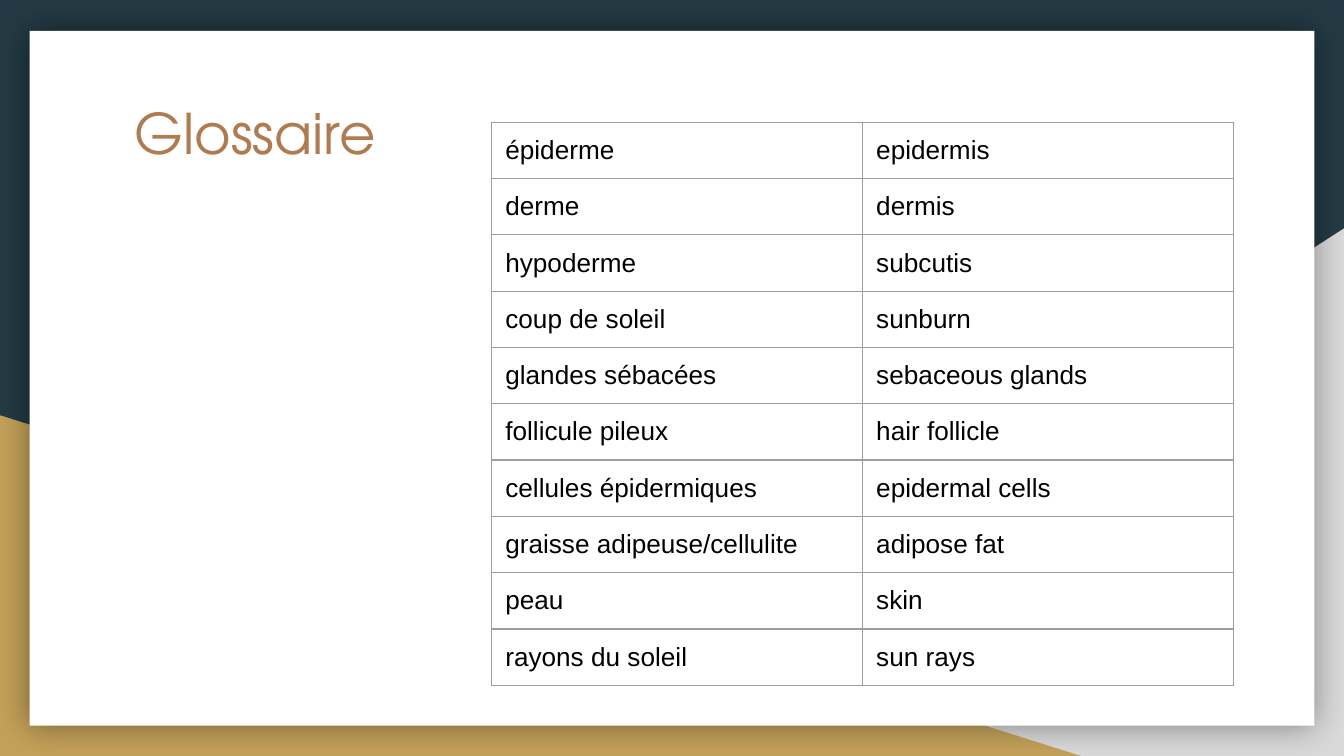
from dataclasses import dataclass

from lxml import etree
from pptx import Presentation
from pptx.dml.color import RGBColor
from pptx.enum.shapes import MSO_SHAPE
from pptx.enum.text import MSO_ANCHOR, PP_ALIGN
from pptx.oxml import parse_xml
from pptx.oxml.ns import nsdecls, qn
from pptx.util import Inches, Pt

RECT = MSO_SHAPE.RECTANGLE
WEDGE = MSO_SHAPE.RIGHT_TRIANGLE
TOP = MSO_ANCHOR.TOP
LEFT = PP_ALIGN.LEFT

NAVY, GREY, GOLD, WHITE = "233A44", "D9D9D9", "C4A15A", "FFFFFF"
BROWN, BLACK, RULE = "AF7B51", "000000", "9E9E9E"
PAD = Inches(0.1)
WIDTH, HEIGHT = 2.76, 0.41


@dataclass
class Panel:
    kind: int
    left: float
    top: float
    width: float
    height: float
    fill: str
    flip: bool = False


@dataclass
class Term:
    french: str
    english: str


PANELS = [
    Panel(WEDGE, 3.92, 1.7, 6.08, 3.93, GREY, flip=True),
    Panel(WEDGE, 0, 3.09, 8.06, 2.54, GOLD),
    Panel(RECT, 0.22, 0.23, 9.56, 5.17, WHITE),
]

TERMS = [
    Term("épiderme", "epidermis"),
    Term("derme", "dermis"),
    Term("hypoderme", "subcutis"),
    Term("coup de soleil", "sunburn"),
    Term("glandes sébacées", "sebaceous glands"),
    Term("follicule pileux", "hair follicle"),
    Term("cellules épidermiques", "epidermal cells"),
    Term("graisse adipeuse/cellulite", "adipose fat"),
    Term("peau", "skin"),
    Term("rayons du soleil", "sun rays"),
]


def paint(fill, color: str) -> None:
    fill.solid()
    fill.fore_color.rgb = RGBColor.from_string(color)


def write(frame, text: str, font: str, size: int, color: str) -> None:
    para = frame.paragraphs[0]
    para.alignment = LEFT
    run = para.add_run()
    run.text = text
    run.font.name = font
    run.font.size = Pt(size)
    run.font.color.rgb = RGBColor.from_string(color)


def pad(box) -> None:
    box.margin_left = box.margin_right = PAD
    box.margin_top = box.margin_bottom = PAD
    box.vertical_anchor = TOP


def draw(slide, part: Panel):
    shape = slide.shapes.add_shape(
        part.kind, Inches(part.left), Inches(part.top),
        Inches(part.width), Inches(part.height))
    shape.shadow.inherit = False
    paint(shape.fill, part.fill)
    shape.line.fill.background()
    if part.flip:
        shape.element.spPr.find(qn("a:xfrm")).set("flipH", "1")
    return shape


def glow(shape) -> None:
    """Add a soft, centred shadow around the shape."""
    effects = shape.element.spPr.find(qn("a:effectLst"))
    effects.append(parse_xml(
        f'<a:outerShdw {nsdecls("a")} blurRad="{Pt(18)}" dist="0" dir="0" '
        'algn="ctr" rotWithShape="0"><a:srgbClr val="000000">'
        '<a:alpha val="40000"/></a:srgbClr></a:outerShdw>'))


def edge(cell) -> None:
    props = cell._tc.get_or_add_tcPr()
    for spot, side in enumerate(("lnL", "lnR", "lnT", "lnB")):
        line = etree.Element(qn(f"a:{side}"), w=str(Pt(0.75)))
        fill = etree.SubElement(line, qn("a:solidFill"))
        etree.SubElement(fill, qn("a:srgbClr"), val=RULE)
        props.insert(spot, line)


def list_terms(slide, terms: list[Term]) -> None:
    table = slide.shapes.add_table(
        len(terms), 2, Inches(3.66), Inches(0.91),
        Inches(2 * WIDTH), Inches(HEIGHT * len(terms))).table
    table.first_row = table.horz_banding = False
    for col in table.columns:
        col.width = Inches(WIDTH)
    for row, term in zip(table.rows, terms):
        row.height = Inches(HEIGHT)
        for cell, word in zip(row.cells, (term.french, term.english)):
            pad(cell)
            cell.fill.background()
            edge(cell)
            write(cell.text_frame, word, "Arial", 14, BLACK)


def main() -> None:
    # Widescreen 16:9 page
    deck = Presentation()
    deck.slide_width, deck.slide_height = Inches(10), Inches(10 * 9 / 16)
    slide = deck.slides.add_slide(deck.slide_layouts[5])

    # Backdrop and white card
    paint(slide.background.fill, NAVY)
    card = [draw(slide, part) for part in PANELS][-1]
    glow(card)

    # Title, in front of the card
    title = slide.shapes.title
    card.element.addnext(title.element)
    title.left, title.top = Inches(0.9), Inches(0.63)
    title.width, title.height = Inches(8.21), Inches(0.8)
    pad(title.text_frame)
    write(title.text_frame, "Glossaire", "TeX Gyre Adventor", 30, BROWN)

    # Glossary
    list_terms(slide, TERMS)
    deck.save("out.pptx")


if __name__ == "__main__":
    main()
